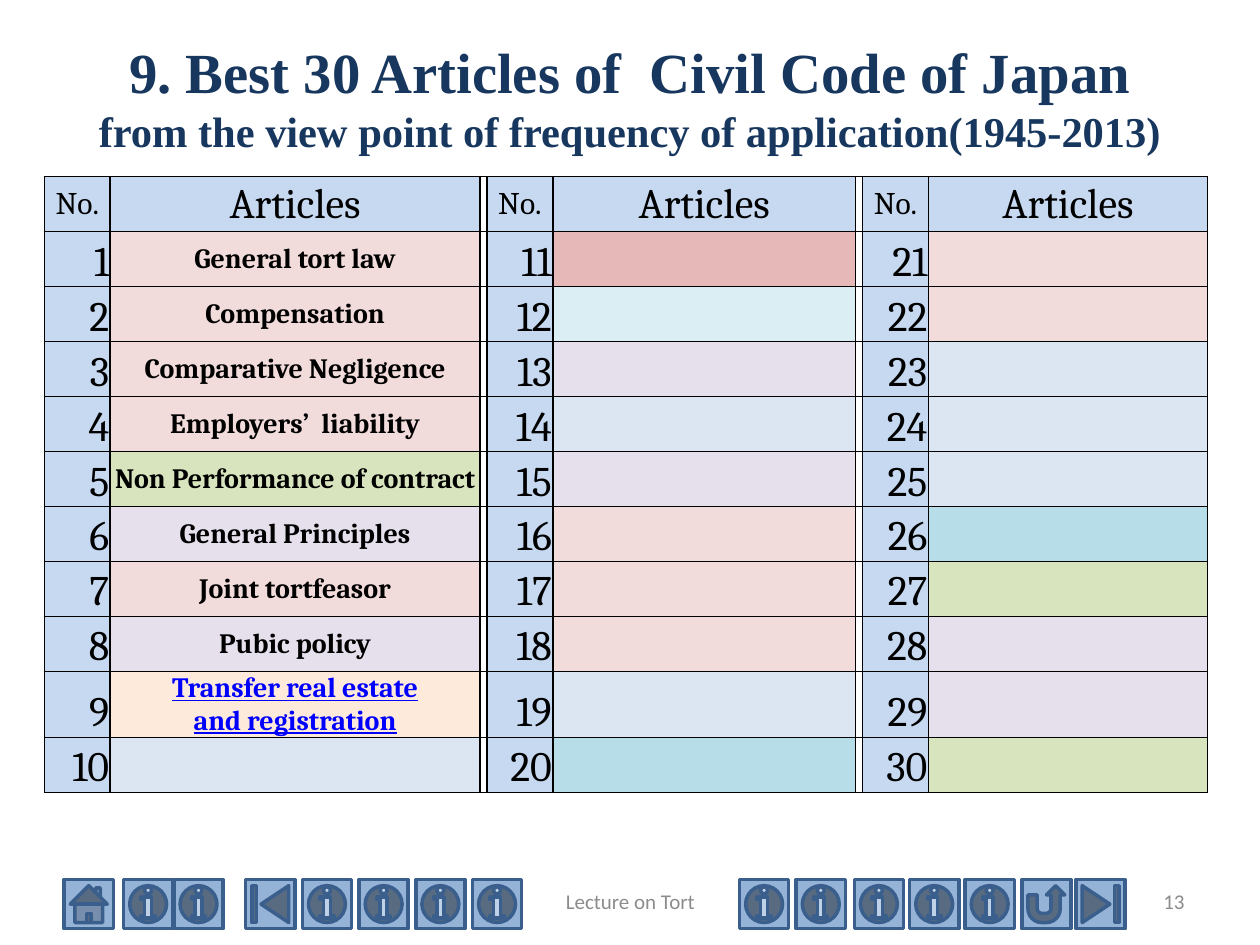
import pptx
import pptx.util
import pptx.dml.color
import pptx.enum.shapes
import pptx.enum.text
import pptx.oxml
import pptx.oxml.ns

Pt = pptx.util.Pt
RGB = pptx.dml.color.RGBColor.from_string
SHAPE = pptx.enum.shapes.MSO_SHAPE
ALIGN = pptx.enum.text.PP_ALIGN
ANCHOR = pptx.enum.text.MSO_ANCHOR

THEME = {
    "navy": "17375E", "black": "000000", "gray": "8C8C8C", "link": "0000FF",
    "head": "C6D9F1", "button": "95B3D7", "edge": "3A5F8C",
    "pink": "F2DCDB", "rose": "E6B9B8", "green": "D7E4BD", "lilac": "E6E0EC",
    "peach": "FDEADA", "blue": "DCE6F2", "ice": "DBEEF4", "aqua": "B7DEE8",
    "title": 32.4, "sub": 24.3, "big": 24, "label": 18, "entry": 16, "foot": 12,
}


def write(frame, text, size="entry", font="Cambria", color="black", bold=False,
          under=False, align=ALIGN.CENTER, rest=None):
    """Write text in one paragraph; lines after the first may take size rest."""
    para = frame.paragraphs[0]
    para.alignment = align
    for num, line in enumerate(text.split("\n")):
        if num:
            para.add_line_break()
        run = para.add_run()
        run.text = line
        run.font.name = font
        run.font.size = Pt(THEME[rest if num and rest else size])
        run.font.bold = bold
        run.font.underline = under
        run.font.color.rgb = RGB(THEME[color])


def border(cell):
    """Draw a thin black line on all four sides of a cell."""
    props = cell._tc.get_or_add_tcPr()
    for spot, side in enumerate(("lnL", "lnR", "lnT", "lnB")):
        props.insert(spot, pptx.oxml.parse_xml(
            f'<a:{side} {pptx.oxml.ns.nsdecls("a")} w="12700"><a:solidFill>'
            f'<a:srgbClr val="{THEME["black"]}"/></a:solidFill></a:{side}>'))


deck = pptx.Presentation()
deck.slide_width, deck.slide_height = Pt(720), Pt(540)
slide = deck.slides.add_slide(deck.slide_layouts[5])

# Navigation buttons
info = SHAPE.ACTION_BUTTON_INFORMATION
buttons = [
    (36.7, SHAPE.ACTION_BUTTON_HOME), (70.6, info), (99.4, info),
    (140.4, SHAPE.ACTION_BUTTON_BEGINNING), (172.8, info), (205.2, info),
    (237.6, info), (270, info), (422.6, info), (455, info), (488.2, info),
    (519.8, info), (551.5, info), (583.9, SHAPE.ACTION_BUTTON_RETURN),
    (614.9, SHAPE.ACTION_BUTTON_END),
]
for left, kind in buttons:
    button = slide.shapes.add_shape(kind, Pt(left), Pt(502.6), Pt(28.1), Pt(28.1))
    button.shadow.inherit = False
    button.fill.solid()
    button.fill.fore_color.rgb = RGB(THEME["button"])
    button.line.color.rgb = RGB(THEME["edge"])
    button.line.width = Pt(2)

# Title
title = slide.shapes.title
title.left, title.top, title.width, title.height = Pt(36), Pt(21.6), Pt(648), Pt(67)
frame = title.text_frame
frame.auto_size = pptx.enum.text.MSO_AUTO_SIZE.NONE
frame.vertical_anchor = ANCHOR.MIDDLE
write(frame, "9. Best 30 Articles of  Civil Code of Japan\n"
      "from the view point of frequency of application(1945-2013)",
      size="title", rest="sub", font="Times New Roman", color="navy", bold=True)

# Articles: three blocks of ten, with a narrow gap between blocks
names = ["General tort law", "Compensation", "Comparative Negligence",
         "Employers’  liability", "Non Performance of contract",
         "General Principles", "Joint tortfeasor", "Pubic policy",
         "Transfer real estate\nand registration"]
fills = [
    "pink pink pink pink green lilac pink lilac peach blue".split(),
    "rose ice lilac blue lilac pink pink pink blue aqua".split(),
    "pink pink blue blue blue aqua green lilac lilac green".split(),
]
widths = [37.6, 211.3, 4, 37.6, 173, 4, 37.6, 159.6]
heights = [31.43] * 9 + [37.7, 31.43]
table = slide.shapes.add_table(len(heights), len(widths), Pt(25.4), Pt(101),
                               Pt(sum(widths)), Pt(sum(heights))).table
table.first_row = table.horz_banding = False
for col, width in zip(table.columns, widths):
    col.width = Pt(width)
for row, height in zip(table.rows, heights):
    row.height = Pt(height)

for row in range(len(heights)):
    for col in range(len(widths)):
        cell = table.cell(row, col)
        cell.margin_left = cell.margin_right = cell.margin_top = Pt(0.6)
        cell.margin_bottom = 0
        cell.vertical_anchor = ANCHOR.MIDDLE
        block, part = divmod(col, 3)
        if part == 2:
            cell.fill.background()
        else:
            tint = fills[block][row - 1] if row and part else "head"
            cell.fill.solid()
            cell.fill.fore_color.rgb = RGB(THEME[tint])
        border(cell)

        order = block * 10 + row
        if part == 2:
            continue
        if row == 0:
            write(cell.text_frame, "Articles" if part else "No.",
                  size="big" if part else "label")
        elif part == 0:
            cell.vertical_anchor = ANCHOR.BOTTOM
            write(cell.text_frame, str(order), size="big", align=ALIGN.RIGHT)
        elif order <= len(names):
            linked = order == 9
            write(cell.text_frame, names[order - 1], bold=True, under=linked,
                  color="link" if linked else "black")

# Footer and slide number
for text, left, width, align in [("Lecture on Tort", 246.2, 228.2, ALIGN.CENTER),
                                 ("13", 516.2, 167.8, ALIGN.RIGHT)]:
    box = slide.shapes.add_textbox(Pt(left), Pt(500.4), Pt(width), Pt(28.8))
    box.text_frame.word_wrap = True
    box.text_frame.vertical_anchor = ANCHOR.MIDDLE
    write(box.text_frame, text, size="foot", font="Calibri", color="gray", align=align)

deck.save("out.pptx")
